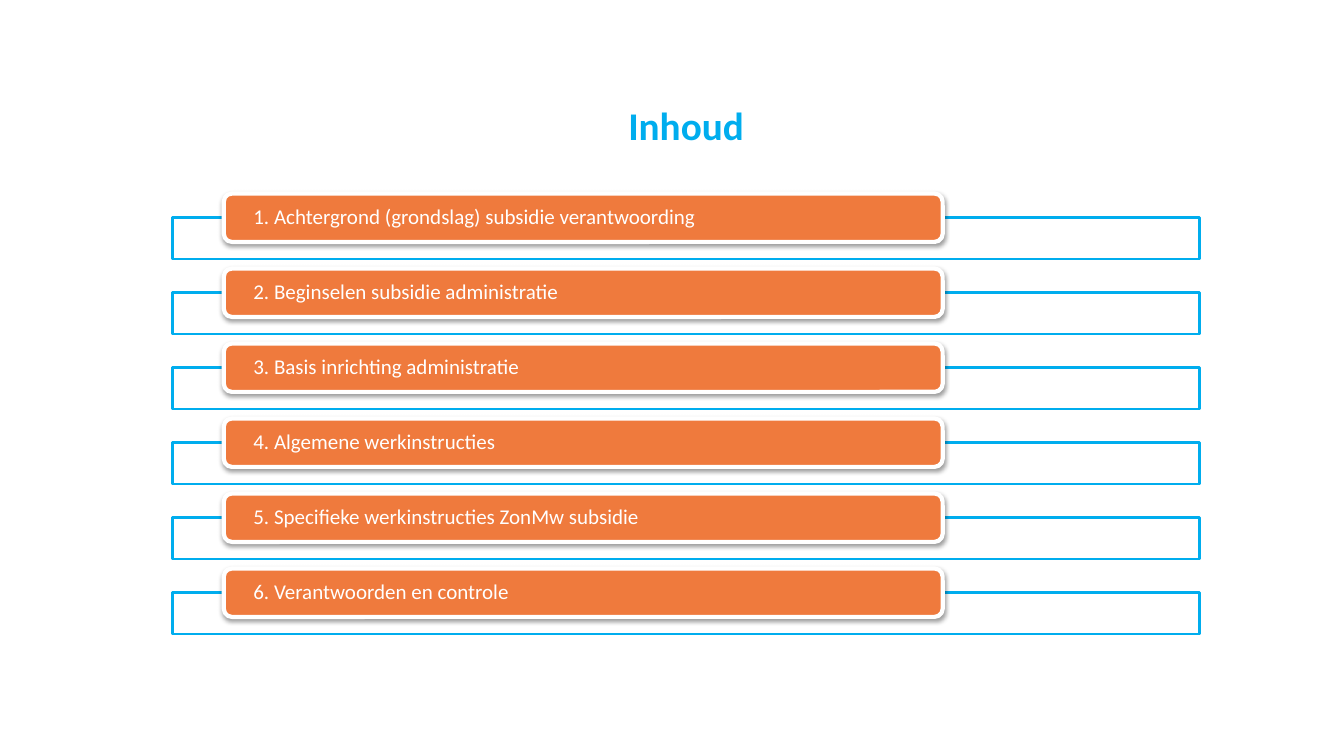
from lxml import etree
from pptx import Presentation
from pptx.dml.color import RGBColor
from pptx.enum.shapes import MSO_SHAPE as Shape
from pptx.enum.text import MSO_ANCHOR as Anchor, PP_ALIGN as Align
from pptx.oxml.ns import qn
from pptx.util import Inches, Pt

TOPICS = [
    "Achtergrond (grondslag) subsidie verantwoording",
    "Beginselen subsidie administratie",
    "Basis inrichting administratie",
    "Algemene werkinstructies",
    "Specifieke werkinstructies ZonMw subsidie",
    "Verantwoorden en controle",
]
FIRST_TOP, LAST_TOP = 1.92, 5.64
PITCH = (LAST_TOP - FIRST_TOP) / (len(TOPICS) - 1)
FRAME_DROP = 0.24


def color(hex_value):
    return RGBColor.from_string(hex_value)


def set_alpha(color_element, percent):
    etree.SubElement(color_element, qn("a:alpha"), val=str(percent * 1000))


class ContentsSlide:
    FONT = "Calibri"
    BLUE, ORANGE, WHITE, BLACK = "00ADEE", "EF7A3D", "FFFFFF", "000000"

    def __init__(self, presentation):
        self.slide = presentation.slides.add_slide(presentation.slide_layouts[5])

    def set_text(self, shape, text, size, text_color, align, side_inset=0, bold=False):
        frame = shape.text_frame
        frame.word_wrap = True
        frame.vertical_anchor = Anchor.MIDDLE
        frame.margin_left = frame.margin_right = Inches(side_inset)
        frame.margin_top = frame.margin_bottom = 0
        frame.text = text
        paragraph = frame.paragraphs[0]
        paragraph.alignment = align
        paragraph.line_spacing = 0.9
        font = paragraph.font
        font.name, font.size, font.bold = self.FONT, Pt(size), bold
        font.color.rgb = color(text_color)

    def title(self, text, left, top, width, height):
        title = self.slide.shapes.title
        title.left, title.top = Inches(left), Inches(top)
        title.width, title.height = Inches(width), Inches(height)
        self.set_text(title, text, 28, self.BLUE, Align.CENTER, bold=True)

    def box(self, kind, left, top, width, height, fill, line, line_width):
        shape = self.slide.shapes.add_shape(
            kind, Inches(left), Inches(top), Inches(width), Inches(height))
        shape.shadow.inherit = False
        shape.fill.solid()
        shape.fill.fore_color.rgb = color(fill)
        shape.line.color.rgb = color(line)
        shape.line.width = Pt(line_width)
        return shape

    def frame(self, top):
        frame = self.box(Shape.RECTANGLE, 1.71, top, 10.19, 0.41,
                         self.WHITE, self.BLUE, 2)
        properties = frame.element.spPr
        set_alpha(properties.find(qn("a:solidFill")).find(qn("a:srgbClr")), 90)

    def label(self, text, top):
        label = self.box(Shape.ROUNDED_RECTANGLE, 2.22, top, 7.13, 0.48,
                         self.ORANGE, self.WHITE, 3)
        self.drop_shadow(label)
        self.set_text(label, text, 15, self.WHITE, Align.LEFT, side_inset=0.27)

    def drop_shadow(self, shape):
        effects = shape.element.spPr.find(qn("a:effectLst"))
        shadow = etree.SubElement(
            effects, qn("a:outerShdw"), blurRad=str(Pt(3.1)), dist=str(Pt(1.6)),
            dir="5400000", rotWithShape="0")
        shade = etree.SubElement(shadow, qn("a:srgbClr"), val=self.BLACK)
        set_alpha(shade, 38)


def main():
    presentation = Presentation()
    presentation.slide_width = Inches(13.33)
    presentation.slide_height = Inches(7.5)
    contents = ContentsSlide(presentation)
    contents.title("Inhoud", 1.7, 1.05, 10.21, 0.43)
    for index, topic in enumerate(TOPICS):
        top = FIRST_TOP + index * PITCH
        contents.frame(top + FRAME_DROP)
        contents.label(f"{index + 1}. {topic}", top)
    presentation.save("out.pptx")


if __name__ == "__main__":
    main()
